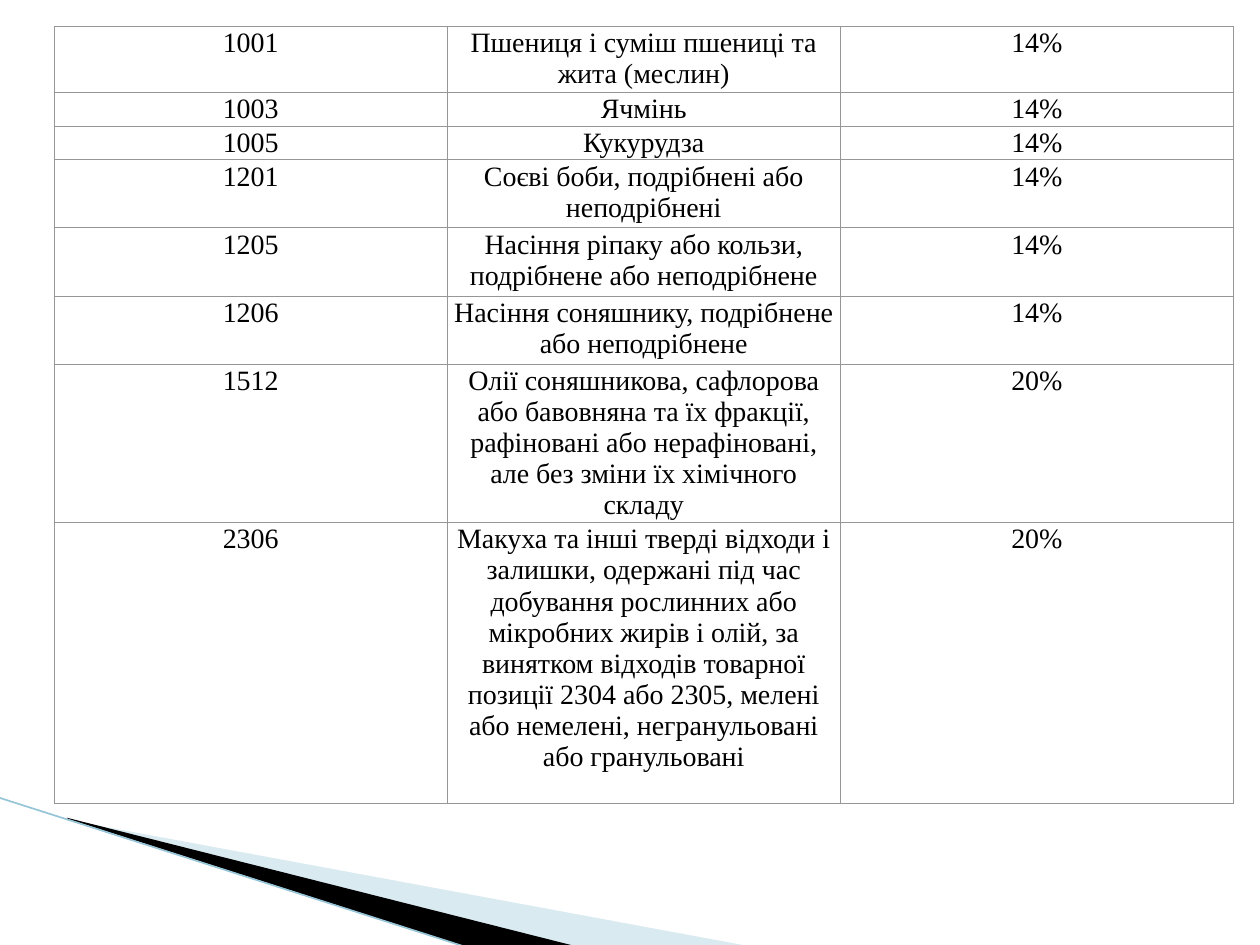
from dataclasses import dataclass
from typing import Optional

from lxml import etree
from pptx import Presentation
from pptx.dml.color import RGBColor
from pptx.enum.shapes import MSO_CONNECTOR
from pptx.enum.text import PP_ALIGN
from pptx.oxml.ns import qn
from pptx.util import Inches, Pt

STRAIGHT = MSO_CONNECTOR.STRAIGHT
CENTER = PP_ALIGN.CENTER
COLORS = {
    "paper": "FFFFFF",
    "ink": "000000",
    "border": "969696",
    "pale": "A0CBDC",
    "edge": "97C5D8",
}
FONT_FORMAT = {
    "name": "Times New Roman",
    "size": Pt(16),
    "bold": False,
}
CELL_FORMAT = {
    f"margin_{side}": Inches(0.01) for side in ("left", "right", "top", "bottom")
}
PLAIN_TABLE = {"first_row": False, "horz_banding": False}
COLUMN_WIDTH = 3.12


@dataclass
class Wedge:
    points: list[tuple[float, float]]
    color: str
    opacity: Optional[int] = None


@dataclass
class Tariff:
    code: str
    goods: str
    rate: str
    height: float


WEDGES = [
    Wedge([(0.55, 6.51), (5.95, 7.51), (4.56, 7.51), (0.55, 6.5)], "pale", 40),
    Wedge([(0.53, 6.49), (4.57, 7.51), (3.72, 7.52), (0.54, 6.5)], "ink"),
]
TARIFFS = [
    Tariff("1001", "Пшениця і суміш пшениці та жита (меслин)", "14%", 0.52),
    Tariff("1003", "Ячмінь", "14%", 0.27),
    Tariff("1005", "Кукурудза", "14%", 0.27),
    Tariff("1201", "Соєві боби, подрібнені або неподрібнені", "14%", 0.54),
    Tariff("1205", "Насіння ріпаку або кользи, подрібнене або неподрібнене", "14%", 0.54),
    Tariff("1206", "Насіння соняшнику, подрібнене або неподрібнене", "14%", 0.54),
    Tariff(
        "1512",
        "Олії соняшникова, сафлорова або бавовняна та їх фракції, "
        "рафіновані або нерафіновані, але без зміни їх хімічного складу",
        "20%",
        1.26,
    ),
    Tariff(
        "2306",
        "Макуха та інші тверді відходи і залишки, одержані під час добування "
        "рослинних або мікробних жирів і олій, за винятком відходів товарної "
        "позиції 2304 або 2305, мелені або немелені, негранульовані або гранульовані",
        "20%",
        2.23,
    ),
]


def rgb(name: str) -> RGBColor:
    return RGBColor.from_string(COLORS[name])


def apply_format(target, values: dict) -> None:
    for name, value in values.items():
        setattr(target, name, value)


def draw_wedge(page, wedge: Wedge) -> None:
    corners = [(Inches(x), Inches(y)) for x, y in wedge.points]
    builder = page.shapes.build_freeform(*corners[0])
    builder.add_line_segments(corners[1:], close=True)
    shape = builder.convert_to_shape()
    shape.shadow.inherit = False
    shape.fill.solid()
    shape.fill.fore_color.rgb = rgb(wedge.color)
    shape.line.fill.background()
    if wedge.opacity is not None:
        color = shape.fill._xPr.find(f".//{qn('a:srgbClr')}")
        etree.SubElement(color, qn("a:alpha"), val=str(wedge.opacity * 1000))


def draw_edge(page) -> None:
    edge = page.shapes.add_connector(
        STRAIGHT, Inches(-0.01), Inches(6.33), Inches(3.71), Inches(7.52)
    )
    edge.line.color.rgb = rgb("edge")
    edge.line.width = Pt(0.95)
    etree.SubElement(edge._element.spPr, qn("a:effectLst"))


def add_borders(cell) -> None:
    properties = cell._tc.get_or_add_tcPr()
    for side in ("lnL", "lnR", "lnT", "lnB"):
        border = etree.SubElement(properties, qn(f"a:{side}"), w=str(Pt(0.5)))
        fill = etree.SubElement(border, qn("a:solidFill"))
        etree.SubElement(fill, qn("a:srgbClr"), val=COLORS["border"])


def fill_cell(cell, text: str) -> None:
    apply_format(cell, CELL_FORMAT)
    add_borders(cell)
    cell.fill.solid()
    cell.fill.fore_color.rgb = rgb("paper")
    para = cell.text_frame.paragraphs[0]
    para.alignment = CENTER
    span = para.add_run()
    span.text = text
    apply_format(span.font, FONT_FORMAT)
    span.font.color.rgb = rgb("ink")


def draw_tariffs(page, tariffs: list[Tariff]) -> None:
    height = sum(tariff.height for tariff in tariffs)
    table = page.shapes.add_table(
        len(tariffs), 3, Inches(0.43), Inches(0.21),
        Inches(3 * COLUMN_WIDTH), Inches(height),
    ).table
    apply_format(table, PLAIN_TABLE)
    for column in table.columns:
        column.width = Inches(COLUMN_WIDTH)
    for row, tariff in zip(table.rows, tariffs):
        row.height = Inches(tariff.height)
        for cell, text in zip(row.cells, (tariff.code, tariff.goods, tariff.rate)):
            fill_cell(cell, text)


def main() -> None:
    """Build the slide of export tariff rates by commodity code."""
    deck = Presentation()
    apply_format(deck, {"slide_width": Inches(10), "slide_height": Inches(7.5)})
    page = deck.slides.add_slide(deck.slide_layouts[6])
    for wedge in WEDGES:
        draw_wedge(page, wedge)
    draw_edge(page)
    draw_tariffs(page, TARIFFS)
    deck.save("out.pptx")


if __name__ == "__main__":
    main()
